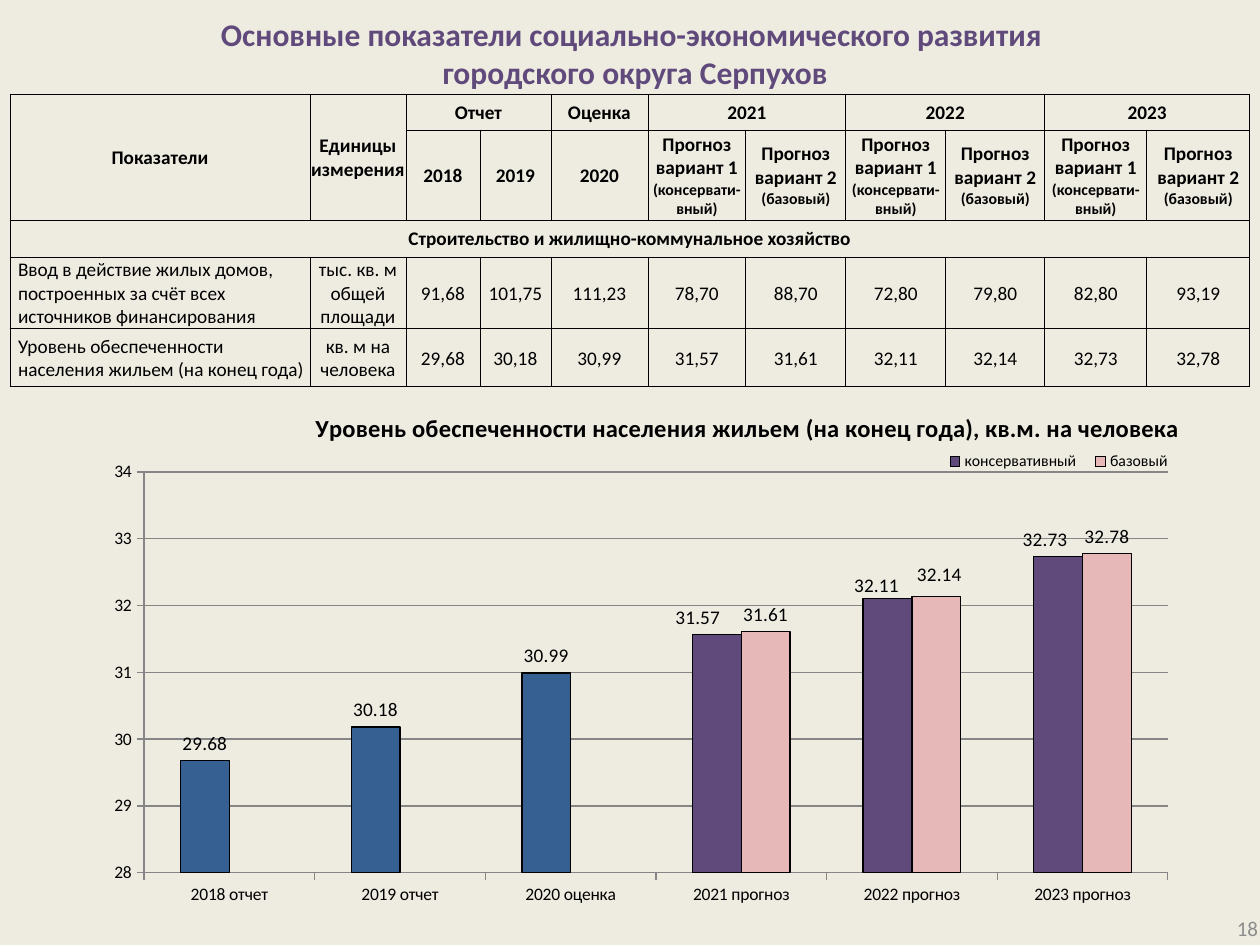
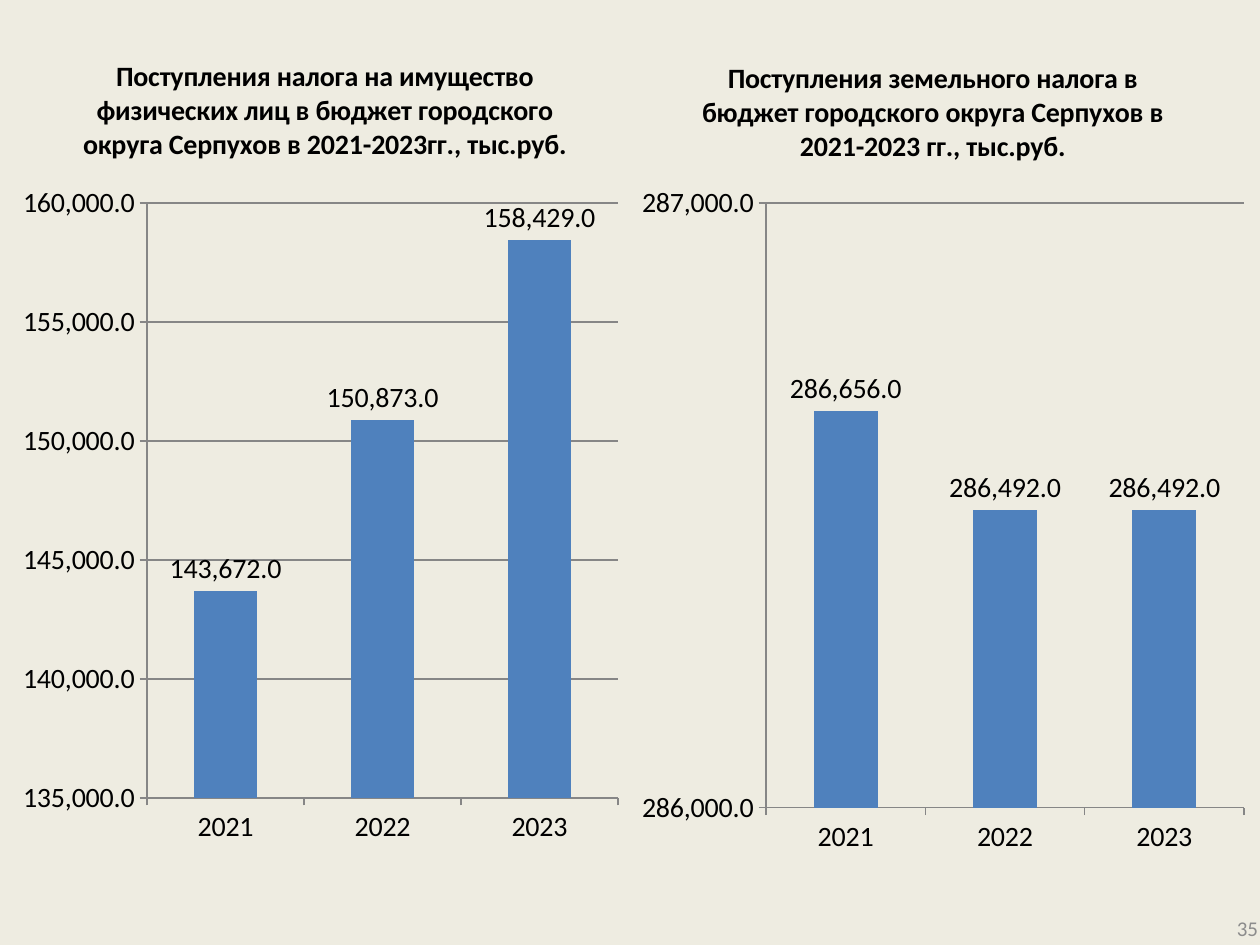
from dataclasses import dataclass
from typing import NamedTuple, Optional

from lxml import etree
from pptx import Presentation
from pptx import util as u
from pptx.chart import data as chart_data
from pptx.dml.color import RGBColor
from pptx.enum import chart as charts
from pptx.enum import text
from pptx.oxml import ns

PX_PER_INCH = 126


@dataclass(frozen=True)
class Theme:
    font: str = "Calibri"
    background: str = "EEECE1"
    ink: str = "000000"
    accent: str = "604A7B"
    pink: str = "E6B9B8"
    past: str = "376092"
    blue: str = "4F81BD"
    grid: str = "868686"
    number: str = "8C8C8C"
    title_size: int = 18
    number_size: int = 12
    table_size: int = 11
    note_size: int = 9


THEME = Theme()


class Box(NamedTuple):
    left: int
    top: int
    width: int = 0
    height: int = 0

    def emu(self) -> list:
        return [px(side) for side in self]


class Cell(NamedTuple):
    row: int
    column: int
    words: str
    note: str = ""
    rows: int = 1
    columns: int = 1
    bold: bool = True
    left_aligned: bool = False


@dataclass
class Bars:
    name: str
    values: tuple
    colour: str
    past_points: int = 0
    label_shifts: Optional[dict] = None  # point index -> (dx, dy) in px


@dataclass
class ColumnChart:
    box: Box
    plot: Box
    title: str
    title_at: Box
    categories: tuple
    bars: list
    scale: tuple  # minimum, maximum, step
    title_size: int
    axis_size: int
    label_size: int
    number_format: str = "General"
    outlined: bool = False
    legend: Optional[Box] = None


def px(length: int) -> int:
    return round(length * u.Inches(1) / PX_PER_INCH)


def rgb(colour: str) -> RGBColor:
    return RGBColor.from_string(colour)


def write(para, words: str, *, size: float, colour: str = THEME.ink,
          bold: bool = False, align=text.PP_ALIGN.CENTER) -> None:
    """Append text to a paragraph; a newline becomes a line break."""
    para.alignment = align
    for index, line in enumerate(words.split("\n")):
        if index:
            para.add_line_break()
        span = para.add_run()
        span.text = line
        span.font.name = THEME.font
        span.font.size = u.Pt(size)
        span.font.bold = bold
        span.font.color.rgb = rgb(colour)


def add_text(page, box: Box, words: str, **style) -> None:
    frame = page.shapes.add_textbox(*box.emu()).text_frame
    frame.word_wrap = True
    frame.vertical_anchor = text.MSO_ANCHOR.MIDDLE
    frame.margin_right = px(2)
    write(frame.paragraphs[0], words, **style)


def add_page(deck, number: int):
    page = deck.slides.add_slide(deck.slide_layouts[6])
    page.background.fill.solid()
    page.background.fill.fore_color.rgb = rgb(THEME.background)
    add_text(page, Box(976, 903, 284, 50), str(number), size=THEME.number_size,
             colour=THEME.number, align=text.PP_ALIGN.RIGHT)
    return page


# Table

def add_borders(cell) -> None:
    properties = cell._tc.get_or_add_tcPr()
    for index, side in enumerate(("lnL", "lnR", "lnT", "lnB")):
        line = etree.Element(ns.qn(f"a:{side}"), w=str(u.Pt(0.5)))
        fill = etree.SubElement(line, ns.qn("a:solidFill"))
        etree.SubElement(fill, ns.qn("a:srgbClr"), val=THEME.ink)
        properties.insert(index, line)


def add_grid(page, left: int, top: int, widths: list, heights: list, entries: list) -> None:
    box = Box(left, top, sum(widths), sum(heights))
    table = page.shapes.add_table(len(heights), len(widths), *box.emu()).table
    table.first_row = table.horz_banding = False
    for column, width in zip(table.columns, widths):
        column.width = px(width)
    for row, height in zip(table.rows, heights):
        row.height = px(height)
    for cell in table.iter_cells():
        cell.fill.background()
        add_borders(cell)
    for entry in entries:
        cell = table.cell(entry.row, entry.column)
        if entry.rows * entry.columns > 1:
            cell.merge(table.cell(entry.row + entry.rows - 1, entry.column + entry.columns - 1))
        cell.vertical_anchor = text.MSO_ANCHOR.MIDDLE
        cell.margin_left = px(8 if entry.left_aligned else 1)
        cell.margin_right = cell.margin_top = px(1)
        cell.margin_bottom = 0
        align = text.PP_ALIGN.LEFT if entry.left_aligned else text.PP_ALIGN.CENTER
        para = cell.text_frame.paragraphs[0]
        write(para, entry.words, size=THEME.table_size, bold=entry.bold, align=align)
        if entry.note:
            write(para, entry.note, size=THEME.note_size, bold=entry.bold, align=align)


def indicator_cells() -> list:
    cells = [
        Cell(0, 0, "Показатели", rows=2),
        Cell(0, 1, "Единицы измерения", rows=2),
        Cell(0, 2, "Отчет", columns=2),
        Cell(0, 4, "Оценка"),
        Cell(2, 0, "Строительство и жилищно-коммунальное хозяйство", columns=11),
    ]
    cells += [Cell(1, 2 + i, str(2018 + i)) for i in range(3)]
    for i in range(3):
        column = 5 + 2 * i
        cells += [
            Cell(0, column, str(2021 + i), columns=2),
            Cell(1, column, "Прогноз вариант 1 ", "(консервати-вный)"),
            Cell(1, column + 1, "Прогноз вариант 2 ", "(базовый)"),
        ]
    indicators = [
        ("Ввод в действие жилых домов, построенных за счёт всех источников финансирования",
         "тыс. кв. м общей площади", "91,68", "101,75", "111,23", "78,70", "88,70",
         "72,80", "79,80", "82,80", "93,19"),
        ("Уровень обеспеченности населения жильем (на конец года)",
         "кв. м на человека", "29,68", "30,18", "30,99", "31,57", "31,61",
         "32,11", "32,14", "32,73", "32,78"),
    ]
    for row, values in enumerate(indicators, start=3):
        cells += [Cell(row, column, words, bold=False, left_aligned=column == 0)
                  for column, words in enumerate(values)]
    return cells


# Charts

def set_layout(element, index: int, **settings) -> None:
    """Give a chart part a manual layout as its child number index."""
    for old in element.findall(ns.qn("c:layout")):
        element.remove(old)
    layout = etree.Element(ns.qn("c:layout"))
    manual = etree.SubElement(layout, ns.qn("c:manualLayout"))
    for name, value in settings.items():
        etree.SubElement(manual, ns.qn(f"c:{name}"), val=str(value))
    element.insert(index, layout)


def fractions(part: Box, whole: Box) -> dict:
    values = {"xMode": "edge", "yMode": "edge",
              "x": round((part.left - whole.left) / whole.width, 4),
              "y": round((part.top - whole.top) / whole.height, 4)}
    if part.width:
        values["w"] = round(part.width / whole.width, 4)
        values["h"] = round(part.height / whole.height, 4)
    return values


def paint(target, colour: str, outlined: bool) -> None:
    target.format.fill.solid()
    target.format.fill.fore_color.rgb = rgb(colour)
    if outlined:
        target.format.line.color.rgb = rgb(THEME.ink)
        target.format.line.width = u.Pt(0.75)


def style_bars(series, bars: Bars, design: ColumnChart) -> None:
    series.invert_if_negative = False
    paint(series, bars.colour, design.outlined)
    for index in range(bars.past_points):
        paint(series.points[index], THEME.past, design.outlined)
    labels = series.data_labels
    labels.show_value = True
    labels.position = charts.XL_LABEL_POSITION.OUTSIDE_END
    labels.number_format = design.number_format
    labels.number_format_is_linked = False
    labels.font.size = u.Pt(design.label_size)
    shifts = bars.label_shifts or {}
    for index, (dx, dy) in shifts.items():
        label = series.points[index].data_label
        label.font.size = u.Pt(design.label_size)
        label.position = charts.XL_LABEL_POSITION.OUTSIDE_END
    elements = series._element.findall(f"{ns.qn('c:dLbls')}/{ns.qn('c:dLbl')}")
    for element, (dx, dy) in zip(elements, shifts.values()):
        set_layout(element, 1, x=round(dx / design.box.width, 4),
                   y=round(dy / design.box.height, 4))


def style_axes(chart, design: ColumnChart) -> None:
    values = chart.value_axis
    values.minimum_scale, values.maximum_scale, values.major_unit = design.scale
    values.has_major_gridlines = True
    values.major_gridlines.format.line.color.rgb = rgb(THEME.grid)
    values.tick_labels.number_format = design.number_format
    values.tick_labels.number_format_is_linked = False
    for axis in (values, chart.category_axis):
        axis.major_tick_mark = charts.XL_TICK_MARK.OUTSIDE
        axis.format.line.color.rgb = rgb(THEME.grid)
        axis.tick_labels.font.size = u.Pt(design.axis_size)


def add_columns(page, design: ColumnChart) -> None:
    data = chart_data.CategoryChartData()
    data.categories = design.categories
    for bars in design.bars:
        data.add_series(bars.name, bars.values)
    chart = page.shapes.add_chart(charts.XL_CHART_TYPE.COLUMN_CLUSTERED,
                                  *design.box.emu(), data).chart
    chart.font.name = THEME.font
    chart.font.size = u.Pt(design.axis_size)
    chart.font.color.rgb = rgb(THEME.ink)

    chart.has_title = True
    write(chart.chart_title.text_frame.paragraphs[0], design.title,
          size=design.title_size, bold=True)
    set_layout(chart.chart_title._element, 1, **fractions(design.title_at, design.box))
    set_layout(chart._chartSpace.chart.plotArea, 0, layoutTarget="inner",
               **fractions(design.plot, design.box))
    chart.has_legend = design.legend is not None
    if design.legend:
        chart.legend.position = charts.XL_LEGEND_POSITION.RIGHT
        chart.legend.include_in_layout = False
        chart.legend.font.size = u.Pt(THEME.note_size)
        set_layout(chart.legend._element, 1, **fractions(design.legend, design.box))

    plot = chart.plots[0]
    plot.gap_width = 150
    plot.overlap = 0
    plot.vary_by_categories = False
    style_axes(chart, design)
    for series, bars in zip(plot.series, design.bars):
        style_bars(series, bars, design)


def tax_chart(box: Box, plot: Box, title: str, title_at: Box,
              values: tuple, scale: tuple) -> ColumnChart:
    return ColumnChart(box, plot, title, title_at, ("2021", "2022", "2023"),
                       [Bars("Series 1", values, THEME.blue)], scale,
                       title_size=16, axis_size=16, label_size=16, number_format="#,##0.0")


# Slides

def build_housing(deck) -> None:
    page = add_page(deck, 18)
    add_text(page, Box(63, 4, 1134, 98),
             "Основные показатели социально-экономического развития \nгородского округа Серпухов",
             size=THEME.title_size, colour=THEME.accent, bold=True)
    add_grid(page, 10, 94, [300, 96, 74, 71, 97, 98, 100, 100, 99, 102, 103],
             [36, 90, 37, 72, 58], indicator_cells())
    years = [f"{year} {kind}" for year, kind in
             zip(range(2018, 2024), ["отчет"] * 2 + ["оценка"] + ["прогноз"] * 3)]
    add_columns(page, ColumnChart(
        Box(31, 399, 1176, 509), Box(144, 472, 1024, 401),
        "Уровень обеспеченности населения жильем (на конец года), кв.м. на человека",
        Box(311, 407), tuple(years),
        [Bars("консервативный", (29.68, 30.18, 30.99, 31.57, 32.11, 32.73), THEME.accent,
              past_points=3, label_shifts={3: (-19, 0), 4: (-11, 4), 5: (-13, 0)}),
         Bars("базовый", (None, None, None, 31.61, 32.14, 32.78), THEME.pink,
              label_shifts={4: (3, -5)})],
        (28, 34, 1), title_size=14, axis_size=10, label_size=11,
        outlined=True, legend=Box(936, 449, 246, 25)))


def build_taxes(deck) -> None:
    page = add_page(deck, 35)
    add_columns(page, tax_chart(
        Box(10, 31, 620, 829), Box(147, 203, 471, 595),
        "Поступления налога на имущество физических лиц в бюджет городского "
        "округа Серпухов в 2021-2023гг., тыс.руб.",
        Box(78, 52), (143672, 150873, 158429), (135000, 160000, 5000)))
    add_columns(page, tax_chart(
        Box(630, 31, 626, 840), Box(766, 203, 478, 605),
        "Поступления земельного налога в бюджет городского округа Серпухов "
        "в 2021-2023 гг., тыс.руб.",
        Box(697, 54), (286656, 286492, 286492), (286000, 287000, 1000)))


def main() -> None:
    deck = Presentation()
    deck.slide_width, deck.slide_height = px(1260), px(945)
    build_housing(deck)
    build_taxes(deck)
    deck.save("out.pptx")


if __name__ == "__main__":
    main()
